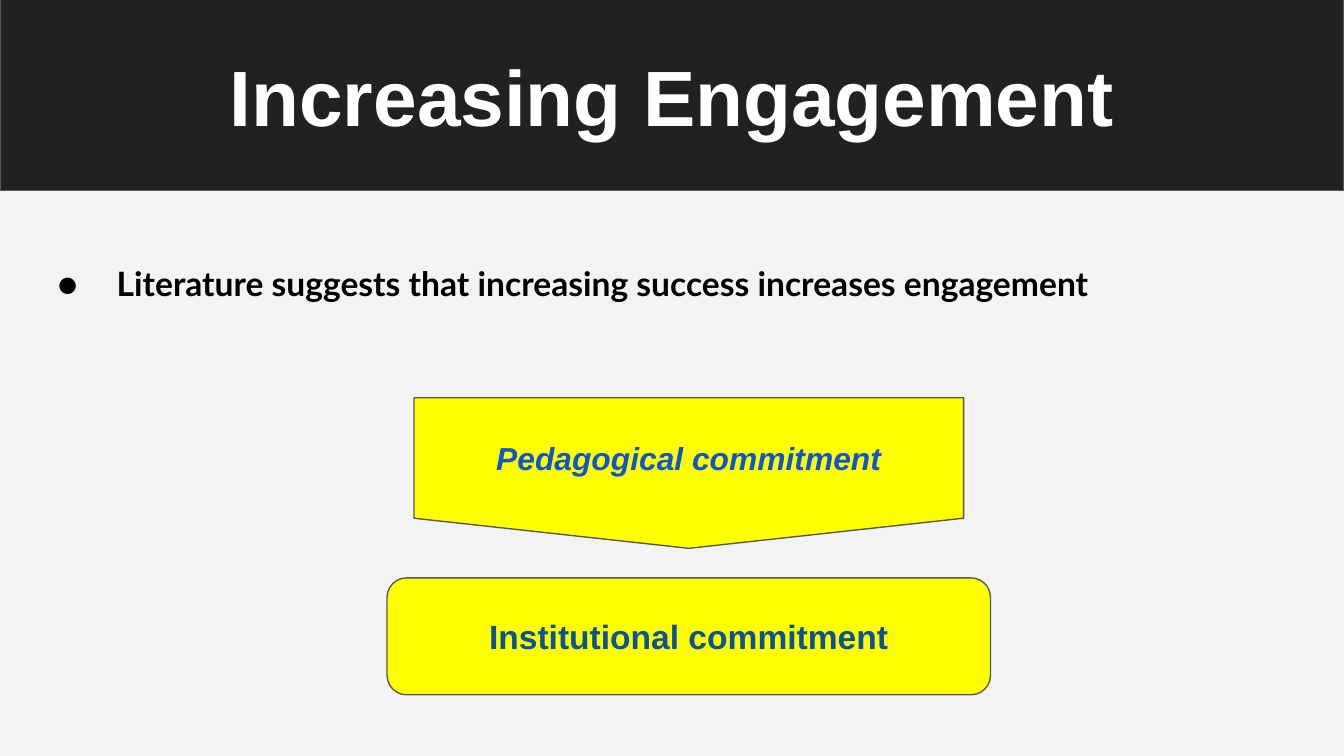
from lxml import etree
from pptx import Presentation
from pptx.dml.color import RGBColor
from pptx.enum.shapes import MSO_SHAPE
from pptx.enum.text import MSO_ANCHOR, PP_ALIGN
from pptx.oxml.ns import qn
from pptx.util import Inches, Pt

RECTANGLE = MSO_SHAPE.RECTANGLE
ROUNDED = MSO_SHAPE.FLOWCHART_ALTERNATE_PROCESS
POINTED = MSO_SHAPE.FLOWCHART_OFFPAGE_CONNECTOR
TOP, MIDDLE = MSO_ANCHOR.TOP, MSO_ANCHOR.MIDDLE
LEFT, CENTER = PP_ALIGN.LEFT, PP_ALIGN.CENTER

COLORS = {
    "background": "F3F3F3",
    "band": "212121",
    "outline": "595959",
    "title": "FFFFFF",
    "point": "000000",
    "commitment": "FFFF00",
    "institutional": "0B5394",
    "pedagogical": "1155CC",
}
SLIDE_WIDTH = 10
SLIDE_HEIGHT = SLIDE_WIDTH * 9 / 16
COMMITMENT_CENTER = 5.125
MARGIN = 0.1
TITLE = "Increasing Engagement"
POINT = " Literature suggests that increasing success increases engagement"
COMMITMENTS = [
    ("Institutional commitment", ROUNDED, 4.3, 4.49, 0.87, 18, "institutional", False),
    ("Pedagogical commitment", POINTED, 2.96, 4.09, 1.12, 17, "pedagogical", True),
]


def rgb(name):
    return RGBColor.from_string(COLORS[name])


def add_panel(slide, kind, box, fill):
    panel = slide.shapes.add_shape(kind, *map(Inches, box))
    panel.shadow.inherit = False
    panel.fill.solid()
    panel.fill.fore_color.rgb = rgb(fill)
    panel.line.color.rgb = rgb("outline")
    panel.line.width = Pt(0.75)
    return panel


def write(holder, text, size, color, font="Arial", align=CENTER, anchor=MIDDLE, italic=False):
    frame = holder.text_frame
    frame.word_wrap = True
    frame.vertical_anchor = anchor
    frame.margin_left = frame.margin_right = Inches(MARGIN)
    frame.margin_top = frame.margin_bottom = Inches(MARGIN)
    paragraph = frame.paragraphs[0]
    paragraph.text = text
    paragraph.alignment = align
    paragraph.font.name = font
    paragraph.font.size = Pt(size)
    paragraph.font.bold = True
    paragraph.font.italic = italic
    paragraph.font.color.rgb = rgb(color)
    return paragraph


def add_bullet(paragraph, indent, hanging, font):
    properties = paragraph._p.get_or_add_pPr()
    properties.set("marL", str(Inches(indent)))
    properties.set("indent", str(-Inches(hanging)))
    default_run = properties.find(qn("a:defRPr"))
    default_run.addprevious(etree.Element(qn("a:buFont"), typeface=font))
    default_run.addprevious(etree.Element(qn("a:buChar"), char="●"))


def main():
    deck = Presentation()
    deck.slide_width, deck.slide_height = Inches(SLIDE_WIDTH), Inches(SLIDE_HEIGHT)
    slide = deck.slides.add_slide(deck.slide_layouts[6])
    slide.background.fill.solid()
    slide.background.fill.fore_color.rgb = rgb("background")

    add_panel(slide, RECTANGLE, (0, -0.07, SLIDE_WIDTH, 1.49), "band")

    title = slide.shapes.add_textbox(*map(Inches, (0, 0.26, SLIDE_WIDTH, 0.87)))
    write(title, TITLE, 42, "title", anchor=TOP)

    point = slide.shapes.add_textbox(*map(Inches, (0.21, 1.86, 9.5, 3.3)))
    bullet_point = write(point, POINT, 18, "point", "Lato", LEFT, TOP)
    bullet_point.space_before = Pt(10)
    add_bullet(bullet_point, 0.5, 0.38, "Lato")

    for text, kind, top, width, height, size, color, italic in COMMITMENTS:
        box = (COMMITMENT_CENTER - width / 2, top, width, height)
        commitment = add_panel(slide, kind, box, "commitment")
        write(commitment, text, size, color, italic=italic)

    deck.save("out.pptx")


if __name__ == "__main__":
    main()
